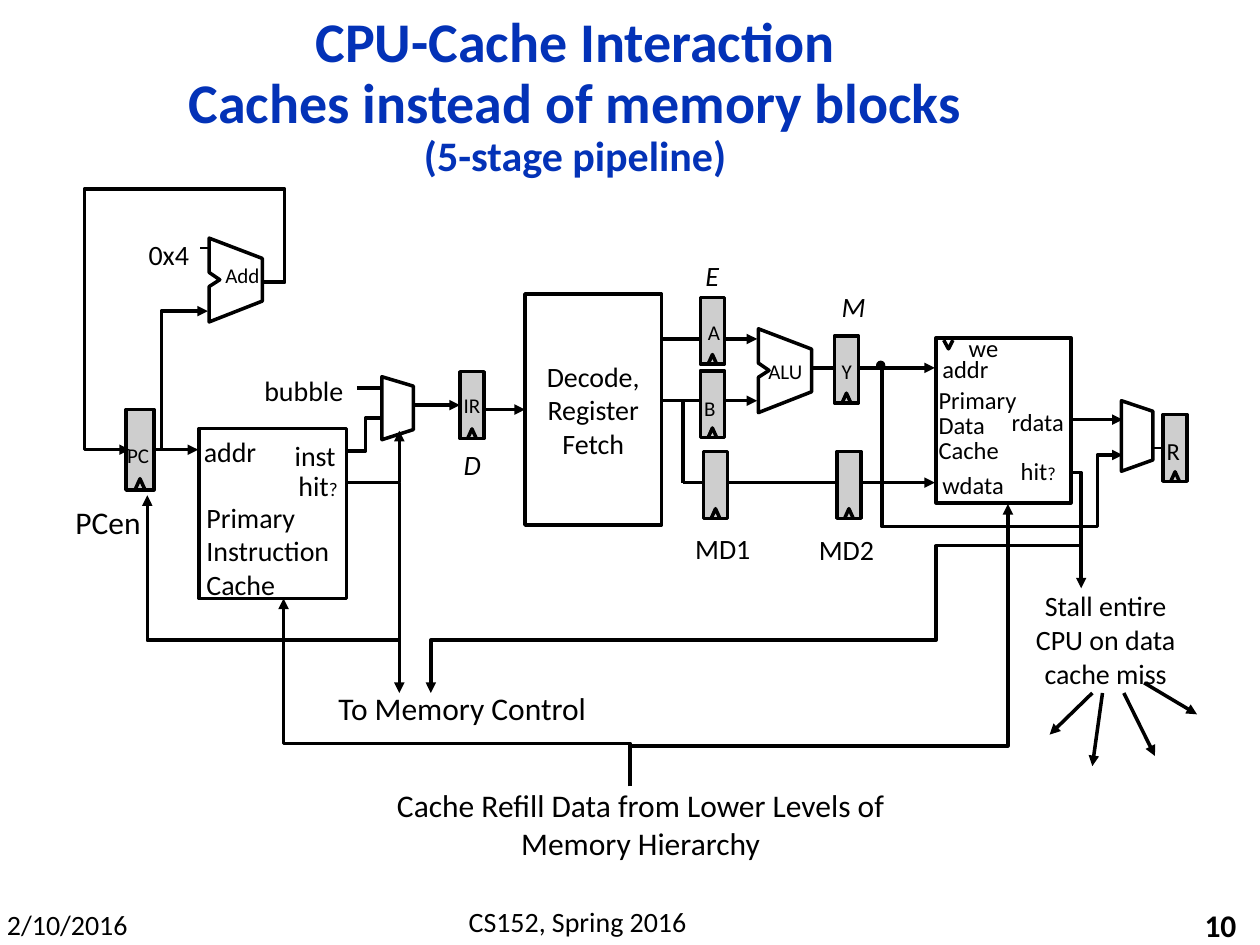
"""Draw the five-stage CPU pipeline with its instruction and data caches."""
from dataclasses import dataclass
from typing import Optional

from lxml.etree import SubElement
from pptx import Presentation
from pptx.dml.color import RGBColor
from pptx.enum.shapes import MSO_CONNECTOR as Link, MSO_SHAPE as Form
from pptx.enum.text import MSO_ANCHOR as Anchor, PP_ALIGN as Align
from pptx.oxml.ns import qn
from pptx.util import Pt

BLACK = RGBColor(0, 0, 0)
WHITE = RGBColor(255, 255, 255)
GREY = RGBColor(0xCE, 0xCE, 0xCE)
BLUE = RGBColor(0x03, 0x32, 0xB7)
FONT = "Calibri"
MID = dict(align=Align.CENTER, anchor=Anchor.MIDDLE)


@dataclass
class Block:
    name: str
    left: float
    top: float
    width: float = 13.8
    height: float = 38.2
    fill: RGBColor = GREY
    form: Form = Form.RECTANGLE
    line: float = 2
    clock: bool = True


@dataclass
class Wire:
    points: list
    arrow: bool = True
    width: float = 2
    start: Optional[tuple] = None
    end: Optional[tuple] = None


@dataclass
class Label:
    text: str
    left: float
    top: float
    width: float
    height: float
    size: float = 16
    style: Optional[dict] = None


BLOCKS = [
    Block("PC", 72, 234, 16, 46),
    Block("IR", 262.8, 212.4),
    Block("A", 400.2, 169.9),
    Block("B", 400.2, 211.9),
    Block("Y", 476.8, 192),
    Block("MD1", 402, 258),
    Block("MD2", 478.2, 258),
    Block("R", 664.6, 236.9),
    Block("Inst", 113.8, 244.8, 84.2, 97.2, WHITE, clock=False),
    Block("Decode", 300, 168, 78, 132, WHITE, clock=False),
    Block("Data", 535, 193, 77, 94.3, WHITE, clock=False),
    Block("Dot", 501.1, 206.6, 4.3, 4.3, BLACK, Form.OVAL, 1, False),
]

BACK = [
    Wire([(390.2, 275.8), (534.2, 275.8)]),
    Wire([(390.2, 228.2), (390.2, 275.8)], False, 2.25),
    Wire([(462.2, 210.2), (504, 210.2)], False),
    Wire([(378, 193.7), (432.7, 193.7)]),
    Wire([(378, 229), (432.7, 229)]),
    Wire([(92.2, 257), (92.2, 177.8), (118.8, 177.8)]),
    Wire([(114.5, 141.8), (119.5, 141.8)], False, 1),
    Wire([(204, 221.8), (218.2, 221.8)], False),
]

FRONT = [
    Wire([(88, 257), (113.3, 257)], start=("PC", 3)),
    Wire([(150.5, 161.3), (162.7, 161.3), (162.7, 108), (48.2, 108), (48.2, 257), (74.2, 257)]),
    Wire([(236.2, 231.5), (262.8, 231.5)], end=("IR", 1)),
    Wire([(276, 234), (300, 234)], end=("Decode", 1)),
    Wire([(197.3, 257.8), (208.8, 257.8), (208.8, 239), (217.4, 239)], False),
    Wire([(198, 275.8), (228.2, 275.8), (228.2, 246.2)]),
    Wire([(228.2, 275.8), (228.2, 365.8), (84.2, 365.8), (84.2, 283)]),
    Wire([(228.2, 354.2), (228.2, 396)]),
    Wire([(504, 210.2), (534.2, 210.2)]),
    Wire([(504, 210.2), (504, 301), (627.1, 301), (627.1, 260), (641.5, 260)]),
    Wire([(612, 239.8), (641.5, 239.8)]),
    Wire([(658.1, 256), (664.6, 256)], False, 1, end=("R", 1)),
    Wire([(360, 449.3), (360, 424.8), (162, 424.8), (162, 342)]),
    Wire([(360, 426.2), (576, 426.2), (576, 288)]),
    Wire([(612, 270), (617.8, 270), (617.8, 336.2)]),
    Wire([(617.8, 311.8), (535, 311.8), (535, 365.8), (246.2, 365.8), (246.2, 396)]),
    Wire([(624.2, 396), (599.8, 419.8)]),
    Wire([(630, 396), (624.2, 437.8)]),
    Wire([(642.2, 396), (660, 432)]),
    Wire([(653.8, 390.2), (684, 408.2)]),
]

LABELS = [
    Label("CPU-Cache Interaction\nCaches instead of memory blocks\n", 46.8, 10.8, 563.8, 90, 32,
          dict(MID, wrap=True, color=BLUE, bold=True, space=0.9, tail="(5-stage pipeline)", small=24)),
    Label("2/10/2016", -3.6, 515, 84.2, 26.6, style=dict(align=Align.CENTER)),
    Label("CS152, Spring 2016", 210.2, 513.4, 239.8, 26.6, style=dict(align=Align.CENTER, wrap=True)),
    Label("10", 563.8, 517, 149.8, 23, 18, dict(align=Align.RIGHT, anchor=Anchor.MIDDLE, bold=True, wrap=True)),
    Label("PC", 65.5, 249.1, 27.4, 21.6, 12),
    Label("IR", 257.8, 221, 24.5, 21.6, 12),
    Label("A", 397.4, 179.3, 21.6, 21.6, 12),
    Label("B", 395.3, 222.5, 20.9, 21.6, 12),
    Label("Y", 473.8, 201.6, 21.6, 21.6, 12),
    Label("R", 659.5, 245.5, 22.3, 23.8, 14),
    Label("Add", 121.7, 146.2, 33.8, 21.6, 12),
    Label("ALU", 432, 201.6, 34.6, 21.6, 12),
    Label("0x4", 77.8, 132.5, 37.4, 26.6),
    Label("bubble", 144, 210.2, 59.8, 26.6),
    Label("addr", 109.4, 244.8, 44.6, 26.6),
    Label("inst", 161.3, 247, 38.2, 26.6),
    Label("hit", 163.4, 264.2, 36.7, 26.6, style=dict(MID, tail="?", small=11)),
    Label("Primary\nInstruction\nCache", 110.9, 282.2, 85.7, 65.5),
    Label("PCen", 36, 283.7, 59, 28.8, 18, dict(anchor=Anchor.MIDDLE)),
    Label("D", 257.8, 252, 28, 26.6, style=dict(italic=True)),
    Label("E", 396, 144, 26, 26.6, style=dict(italic=True)),
    Label("M", 473.8, 162, 32.4, 26.6, style=dict(italic=True)),
    Label("MD1", 390.2, 300.2, 46, 26.6),
    Label("MD2", 460.8, 301, 46, 26.6),
    Label("we", 546.5, 186.5, 31.7, 23.8, 14),
    Label("addr", 531.4, 198.7, 41, 23.8, 14),
    Label("wdata", 531.4, 265, 50.4, 23.8, 14),
    Label("rdata", 571, 229, 45.4, 23.8, 14),
    Label("Primary\nData\nCache", 529.2, 218.9, 59, 50.4, 14, dict(space=0.85)),
    Label("hit", 576, 257, 34.6, 24.5, 14, dict(MID, tail="?", small=10.5)),
    Label("Stall entire CPU on data cache miss", 576, 332.6, 111.6, 65.5, style=dict(MID, wrap=True)),
    Label("To Memory Control", 174.2, 390.2, 180, 28.8, 18, dict(MID, wrap=True)),
    Label("Cache Refill Data from Lower Levels of Memory Hierarchy", 216, 445, 300.2, 51.1, 18,
          dict(MID, wrap=True)),
]


def write(frame, text: str, *, size=16, color=BLACK, bold=False, italic=False, align=Align.LEFT,
          anchor=Anchor.TOP, wrap=False, space=1.0, tail="", small=12) -> None:
    frame.word_wrap = wrap
    frame.vertical_anchor = anchor
    lines = [[(line, size)] for line in text.split("\n")]
    lines[-1].append((tail, small))
    for row, parts in enumerate(lines):
        para = frame.add_paragraph() if row else frame.paragraphs[0]
        para.alignment, para.line_spacing = align, space
        for words, height in parts:
            if words:
                run = para.add_run()
                run.text = words
                font = run.font
                font.name, font.size, font.bold, font.italic = FONT, Pt(height), bold, italic
                font.color.rgb = color


def paint(shape, fill: Optional[RGBColor], width: float = 2) -> None:
    shape.shadow.inherit = False
    if fill is None:
        shape.fill.background()
    else:
        shape.fill.solid()
        shape.fill.fore_color.rgb = fill
    shape.line.color.rgb, shape.line.width = BLACK, Pt(width)


def trace(shapes, points: list, fill: Optional[RGBColor] = None, close=False, width: float = 2):
    spots = [(Pt(x), Pt(y)) for x, y in points]
    path = shapes.build_freeform(*spots[0])
    path.add_line_segments(spots[1:], close=close)
    shape = path.convert_to_shape()
    paint(shape, fill, width)
    return shape


def wire(shapes, item: Wire, made: dict) -> None:
    if len(item.points) > 2:
        line = trace(shapes, item.points, width=item.width)
    else:
        (x1, y1), (x2, y2) = item.points
        line = shapes.add_connector(Link.STRAIGHT, Pt(x1), Pt(y1), Pt(x2), Pt(y2))
        line.line.color.rgb, line.line.width = BLACK, Pt(item.width)
        SubElement(line._element.spPr, qn("a:effectLst"))
        if item.start:
            line.begin_connect(made[item.start[0]], item.start[1])
        if item.end:
            line.end_connect(made[item.end[0]], item.end[1])
    if item.arrow:
        SubElement(line.line._get_or_add_ln(), qn("a:tailEnd"), type="triangle")


def block(shapes, item: Block):
    shape = shapes.add_shape(item.form, Pt(item.left), Pt(item.top), Pt(item.width), Pt(item.height))
    paint(shape, item.fill, item.line)
    if item.clock:
        mid, base, half = item.left + item.width / 2, item.top + item.height, item.width * 0.18
        trace(shapes, [(mid - half, base), (mid, base - item.width * 0.4), (mid + half, base)])
    return shape


def adder(shapes, left: float, top: float) -> None:
    form = [(0, 0), (0, 19.6), (6.1, 23.8), (0, 27.7), (0, 47.9), (30.4, 36), (30.4, 11.6)]
    trace(shapes, [(left + x, top + y) for x, y in form], WHITE, True)


def mux(shapes, left: float, top: float, tall: float) -> None:
    right = left + 18
    trace(shapes, [(left, top), (right, top + tall * 0.15), (right, top + tall * 0.84),
                   (left, top + tall)], WHITE, True)


def main() -> None:
    deck = Presentation()
    deck.slide_width, deck.slide_height = Pt(720), Pt(540)
    shapes = deck.slides.add_slide(deck.slide_layouts[6]).shapes
    for item in BACK:
        wire(shapes, item, {})
    made = {item.name: block(shapes, item) for item in BLOCKS}
    write(made["Decode"].text_frame, "Decode,\nRegister\nFetch", **MID)
    trace(shapes, [(539.3, 194.4), (542, 199.4), (544.5, 194.4)])
    adder(shapes, 119.5, 136.1)
    adder(shapes, 433.4, 187.9)
    mux(shapes, 218.2, 215.3, 36)
    mux(shapes, 640.8, 229, 40.3)
    for item in FRONT:
        wire(shapes, item, made)
    for item in LABELS:
        box = shapes.add_textbox(Pt(item.left), Pt(item.top), Pt(item.width), Pt(item.height))
        write(box.text_frame, item.text, size=item.size, **(item.style or {}))
    deck.save("out.pptx")


if __name__ == "__main__":
    main()
